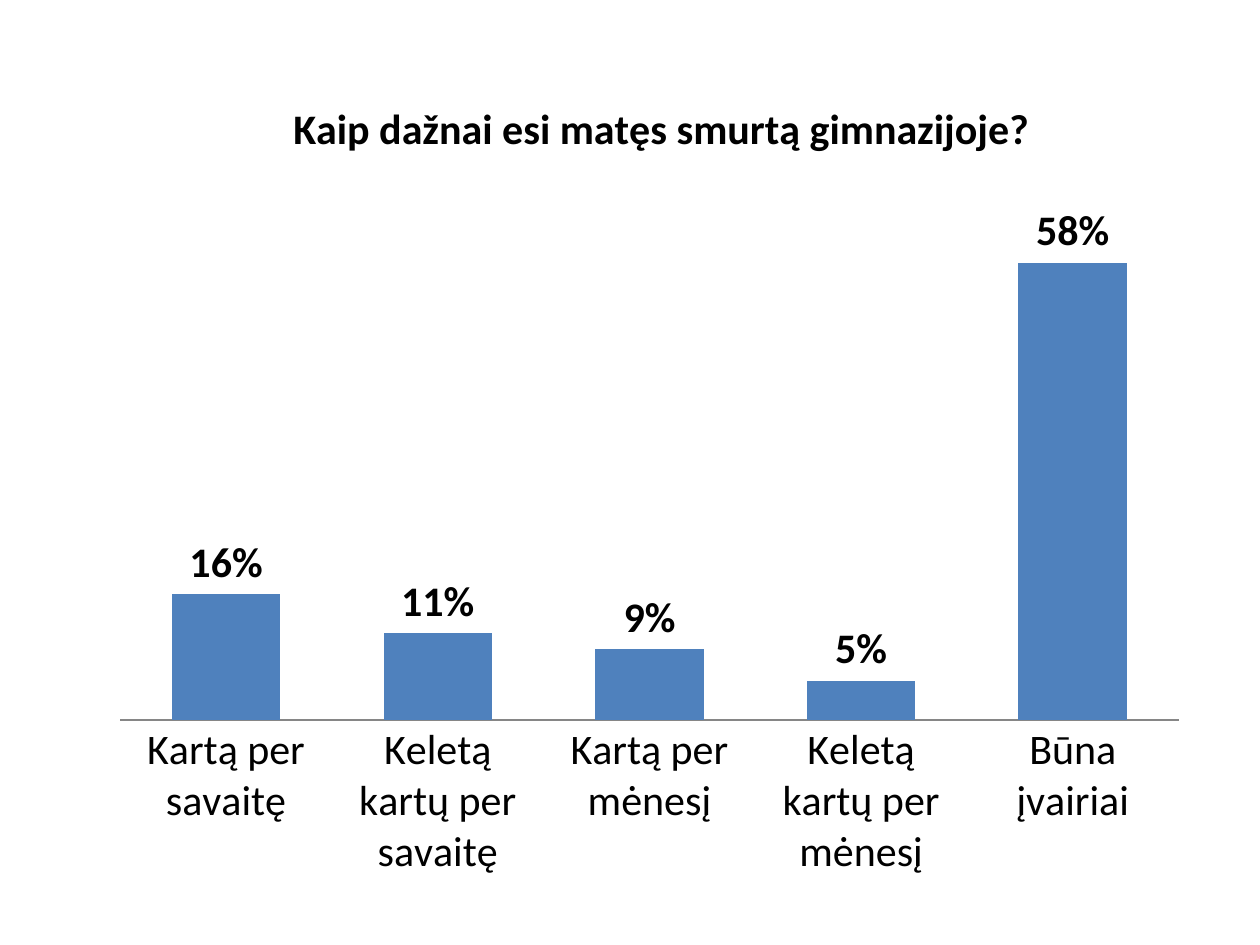
from lxml import etree
from pptx import Presentation
from pptx.chart.data import CategoryChartData
from pptx.dml.color import RGBColor
from pptx.enum.chart import XL_CHART_TYPE, XL_LABEL_POSITION, XL_TICK_MARK
from pptx.oxml.ns import qn
from pptx.util import Inches, Pt

COLUMNS = XL_CHART_TYPE.COLUMN_CLUSTERED
OUTSIDE_END = XL_LABEL_POSITION.OUTSIDE_END
NO_TICKS = XL_TICK_MARK.NONE

BLACK = RGBColor(0x00, 0x00, 0x00)
BLUE = RGBColor(0x4F, 0x81, 0xBD)
GRAY = RGBColor(0x86, 0x86, 0x86)

TITLE = "Kaip dažnai esi matęs smurtą gimnazijoje?"
ANSWERS = {
    "Kartą per savaitę": 0.16,
    "Keletą kartų per savaitę": 0.11,
    "Kartą per mėnesį": 0.09,
    "Keletą kartų per mėnesį": 0.05,
    "Būna įvairiai": 0.58,
}


def style_font(font, bold=False):
    values = {"name": "Calibri", "size": Pt(24), "bold": bold}
    for name, value in values.items():
        setattr(font, name, value)
    font.color.rgb = BLACK


def set_layout(parent, position, **settings):
    """Place a chart part by fractions of the chart's size."""
    for old in parent.findall(qn("c:layout")):
        parent.remove(old)
    layout = etree.Element(qn("c:layout"))
    manual = etree.SubElement(layout, qn("c:manualLayout"))
    for name, value in settings.items():
        etree.SubElement(manual, qn(f"c:{name}")).set("val", str(value))
    parent.insert(position, layout)


def add_answer_chart(slide, left, top, width, height):
    data = CategoryChartData(number_format="0%")
    data.categories = list(ANSWERS)
    data.add_series("Series 1", list(ANSWERS.values()))
    chart = slide.shapes.add_chart(COLUMNS, left, top, width, height, data).chart
    chart.has_legend = False
    style_font(chart.font)

    # Title
    chart.has_title = True
    title = chart.chart_title
    tf = title.text_frame
    tf.text = TITLE
    style_font(tf.paragraphs[0].runs[0].font, bold=True)
    title.include_in_layout = False
    set_layout(title._element, 1, xMode="edge", yMode="edge", x=0.17, y=0.04)

    # Axes
    axis = chart.category_axis
    axis.major_tick_mark = NO_TICKS
    axis.format.line.color.rgb = GRAY
    axis.format.line.width = Pt(0.75)
    style_font(axis.tick_labels.font)
    scale = chart.value_axis
    scale.visible = False
    scale.has_major_gridlines = False
    scale.minimum_scale, scale.maximum_scale = 0, 0.7

    # Columns and their labels
    plot = chart.plots[0]
    plot.gap_width = 95
    plot.vary_by_categories = False
    series = plot.series[0]
    series.format.fill.solid()
    series.format.fill.fore_color.rgb = BLUE
    labels = series.data_labels
    options = {"show_value": True, "number_format": "0%",
               "number_format_is_linked": False, "position": OUTSIDE_END}
    for name, value in options.items():
        setattr(labels, name, value)
    style_font(labels.font, bold=True)

    # Plot area
    plot_area = chart._chartSpace.find(".//" + qn("c:plotArea"))
    set_layout(plot_area, 0, layoutTarget="inner", xMode="edge", yMode="edge",
               x=0.02, y=0.13, w=0.96, h=0.66)


def main():
    prs = Presentation()
    prs.slide_width, prs.slide_height = Inches(10), Inches(7.5)
    s = prs.slides.add_slide(prs.slide_layouts[6])
    add_answer_chart(s, Inches(0.78), Inches(0.47), Inches(8.75), Inches(6.64))
    prs.save("out.pptx")


if __name__ == "__main__":
    main()
